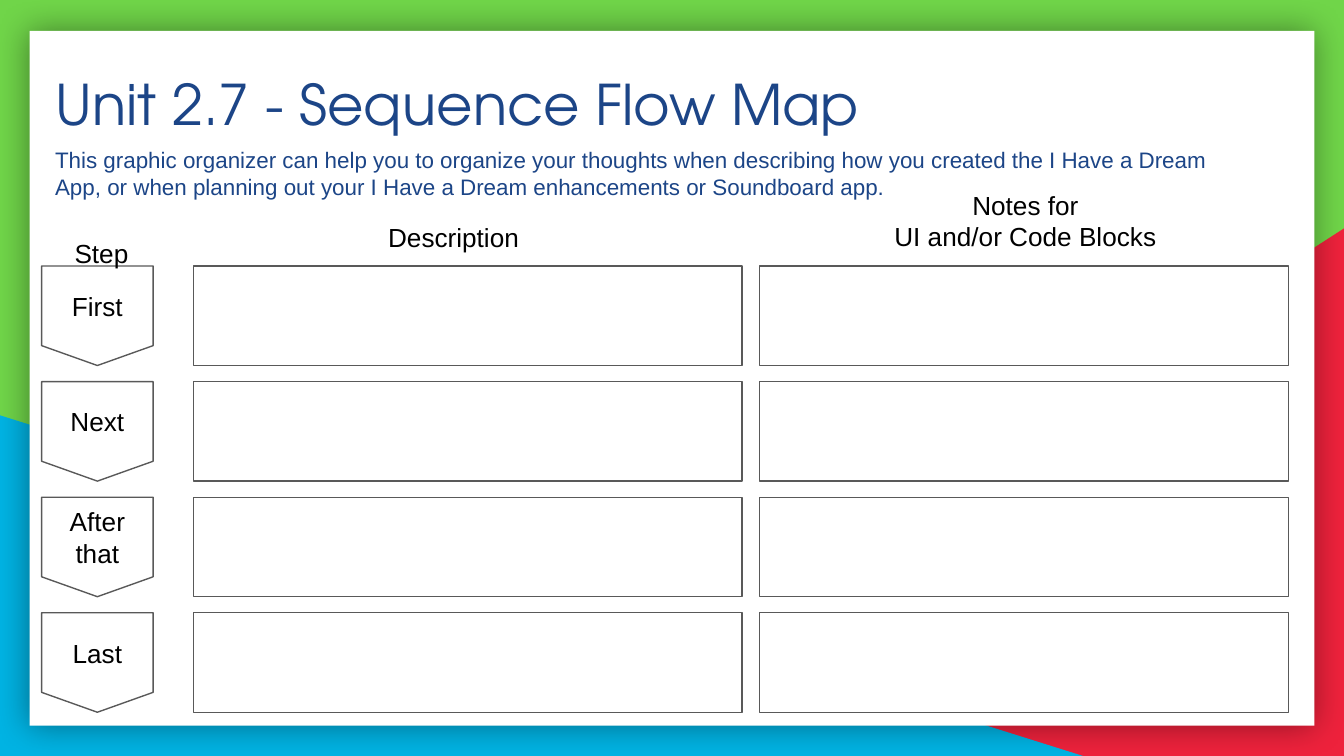
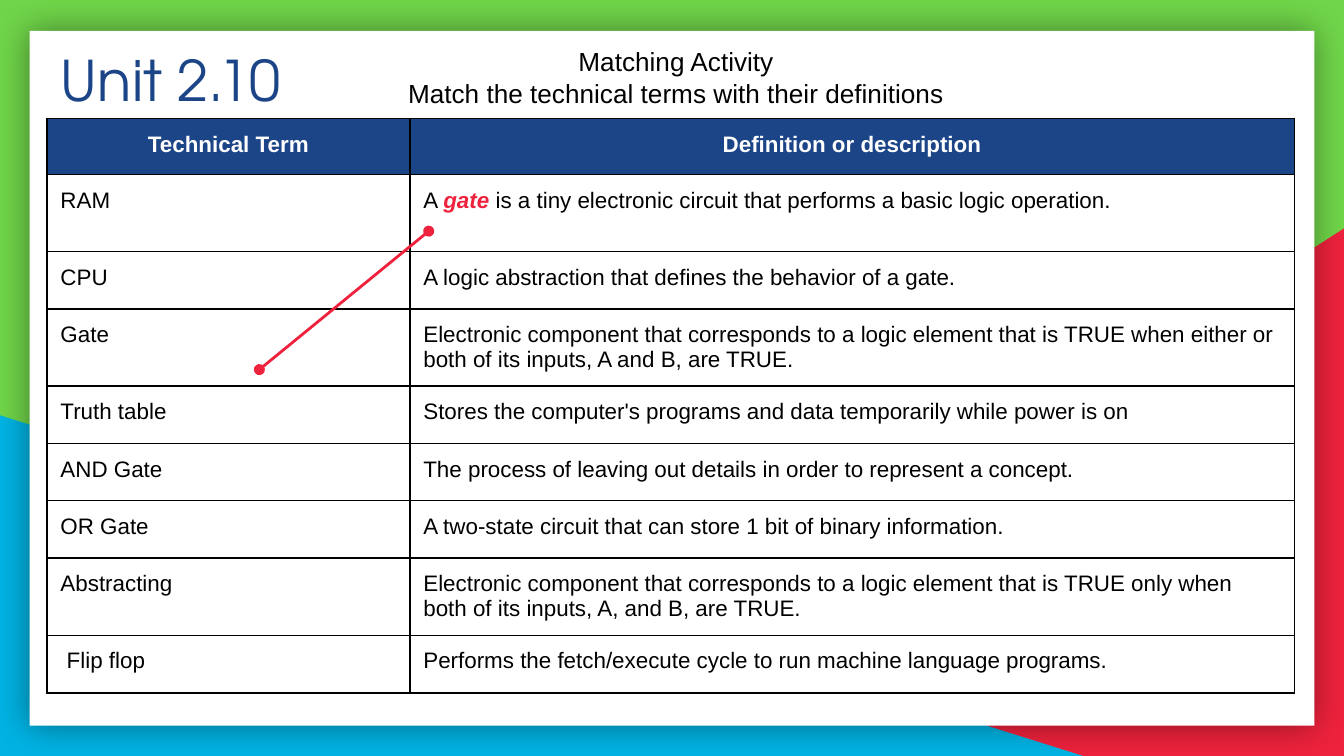
from lxml.etree import SubElement
from pptx import Presentation
from pptx.dml.color import RGBColor
from pptx.enum.shapes import MSO_CONNECTOR, MSO_SHAPE
from pptx.enum.text import MSO_ANCHOR as Anchor, MSO_AUTO_SIZE as AutoSize, PP_ALIGN as Align
from pptx.oxml.ns import qn
from pptx.util import Inches, Pt

GREEN = RGBColor(0x70, 0xD5, 0x49)
RED = RGBColor(0xEE, 0x22, 0x3C)
CYAN = RGBColor(0x00, 0xB3, 0xE3)
NAVY = RGBColor(0x1C, 0x45, 0x87)
GRAY = RGBColor(0x59, 0x59, 0x59)
BLACK = RGBColor(0, 0, 0)
WHITE = RGBColor(255, 255, 255)

BODY_FONT = "Arial"
TITLE_FONT = "TeX Gyre Adventor"
WIDTH, HEIGHT = 10, 10 * 9 / 16
INSET = Inches(0.1)

STEPS = ["First", "Next", "After that", "Last"]
MATCHES = [
    ("RAM", None),
    ("CPU", "A logic abstraction that defines the behavior of a gate."),
    ("Gate", "Electronic component that corresponds to a logic element that is "
             "TRUE when either or both of its inputs, A and B, are TRUE."),
    ("Truth table", "Stores the computer's programs and data temporarily while power is on"),
    ("AND Gate", "The process of leaving out details in order to represent a concept."),
    ("OR Gate", "A two-state circuit that can store 1 bit of binary information."),
    ("Abstracting", "Electronic component that corresponds to a logic element that is "
                    "TRUE only when both of its inputs, A, and B, are TRUE."),
    (" Flip flop", "Performs the fetch/execute cycle to run machine language programs."),
]
ROW_HEIGHTS = [0.42, 0.57, 0.43, 0.57, 0.43, 0.42, 0.43, 0.57, 0.43]


def add_color(parent, color):
    fill = SubElement(parent, qn("a:solidFill"))
    return SubElement(fill, qn("a:srgbClr"), val=str(color))


class Deck:
    """Holds the shared style and the current slide."""

    def __init__(self):
        self.presentation = Presentation()
        self.presentation.slide_width = Inches(WIDTH)
        self.presentation.slide_height = Inches(HEIGHT)
        self.layout = self.presentation.slide_layouts.get_by_name("Title Only")
        self.slide = None

    def new_slide(self):
        self.slide = self.presentation.slides.add_slide(self.layout)

    def build_backdrop(self):
        """Draw the coloured backdrop once and move it to the master."""
        master = self.presentation.slide_master
        master.background.fill.solid()
        master.background.fill.fore_color.rgb = GREEN
        red_corner = self.shape(MSO_SHAPE.RIGHT_TRIANGLE, 3.92, 1.7, 6.08, HEIGHT - 1.7, fill=RED)
        red_corner._element.spPr.find(qn("a:xfrm")).set("flipH", "1")
        cyan_corner = self.shape(MSO_SHAPE.RIGHT_TRIANGLE, 0, 3.09, 8.06, HEIGHT - 3.09, fill=CYAN)
        panel = self.shape(MSO_SHAPE.RECTANGLE, 0.22, 0.23, 9.56, 5.17, fill=WHITE)
        effects = panel._element.spPr.find(qn("a:effectLst"))
        shadow = SubElement(effects, qn("a:outerShdw"), blurRad=str(Pt(18)),
                            dist="0", dir="0", algn="ctr", rotWithShape="0")
        shadow_color = SubElement(shadow, qn("a:srgbClr"), val=str(BLACK))
        SubElement(shadow_color, qn("a:alpha"), val="40000")
        for index, part in enumerate((red_corner, cyan_corner, panel)):
            master.shapes._spTree.insert(2 + index, part._element)

    def add_run(self, paragraph, text, size, color=BLACK, font=BODY_FONT, bold=False, italic=False):
        run = paragraph.add_run()
        run.text = text
        run.font.name = font
        run.font.size = Pt(size)
        run.font.color.rgb = color
        run.font.bold = bold
        run.font.italic = italic

    def prepare_frame(self, frame, anchor=Anchor.TOP):
        frame.word_wrap = True
        frame.auto_size = AutoSize.NONE
        frame.vertical_anchor = anchor
        frame.margin_left = frame.margin_right = INSET
        frame.margin_top = frame.margin_bottom = INSET

    def title(self, text, left, top, width, height, subtitle=None):
        title = self.slide.shapes.title
        title.left, title.top = Inches(left), Inches(top)
        title.width, title.height = Inches(width), Inches(height)
        frame = title.text_frame
        self.prepare_frame(frame)
        frame.paragraphs[0].alignment = Align.LEFT
        self.add_run(frame.paragraphs[0], text, 30, NAVY, TITLE_FONT)
        if subtitle:
            paragraph = frame.add_paragraph()
            paragraph.alignment = Align.LEFT
            paragraph.space_before = Pt(5)
            self.add_run(paragraph, subtitle, 12, NAVY)

    def shape(self, kind, left, top, width, height, fill=None, line=None, text=None):
        shape = self.slide.shapes.add_shape(
            kind, Inches(left), Inches(top), Inches(width), Inches(height))
        shape.shadow.inherit = False
        if fill is None:
            shape.fill.background()
        else:
            shape.fill.solid()
            shape.fill.fore_color.rgb = fill
        if line is None:
            shape.line.fill.background()
        else:
            shape.line.color.rgb = line
            shape.line.width = Pt(0.75)
        if text:
            self.prepare_frame(shape.text_frame, Anchor.MIDDLE)
            paragraph = shape.text_frame.paragraphs[0]
            paragraph.alignment = Align.CENTER
            self.add_run(paragraph, text, 14)
        return shape

    def label(self, lines, left, top, width, height):
        box = self.slide.shapes.add_textbox(
            Inches(left), Inches(top), Inches(width), Inches(height))
        frame = box.text_frame
        self.prepare_frame(frame)
        for index, line in enumerate(lines):
            paragraph = frame.add_paragraph() if index else frame.paragraphs[0]
            paragraph.alignment = Align.CENTER
            self.add_run(paragraph, line, 14)

    def table(self, left, top, column_widths, row_heights):
        table = self.slide.shapes.add_table(
            len(row_heights), len(column_widths), Inches(left), Inches(top),
            Inches(sum(column_widths)), Inches(sum(row_heights))).table
        table.first_row = table.horz_banding = False
        for column, width in zip(table.columns, column_widths):
            column.width = Inches(width)
        for row, height in zip(table.rows, row_heights):
            row.height = Inches(height)
        return table

    def cell(self, cell, runs, fill=None, align=Align.LEFT):
        """Fill one cell; runs is a list of (text, style) pairs."""
        cell.margin_left = cell.margin_right = INSET
        cell.margin_top = cell.margin_bottom = INSET
        properties = cell._tc.get_or_add_tcPr()
        for side in ("a:lnL", "a:lnR", "a:lnT", "a:lnB"):
            add_color(SubElement(properties, qn(side), w=str(Pt(0.75))), BLACK)
        if fill is None:
            cell.fill.background()
        else:
            cell.fill.solid()
            cell.fill.fore_color.rgb = fill
        paragraph = cell.text_frame.paragraphs[0]
        paragraph.alignment = align
        for text, style in runs:
            self.add_run(paragraph, text, 12, **style)
        return paragraph

    def match_line(self, start, end):
        connector = self.slide.shapes.add_connector(
            MSO_CONNECTOR.STRAIGHT, *(Inches(value) for value in start + end))
        connector.line.color.rgb = RED
        connector.line.width = Pt(1.5)
        line = connector.line._get_or_add_ln()
        for line_end in ("a:headEnd", "a:tailEnd"):
            SubElement(line, qn(line_end), type="oval")
        SubElement(connector._element.spPr, qn("a:effectLst"))


def sequence_slide(deck):
    deck.title("Unit 2.7 - Sequence Flow Map", 0.31, 0.42, 9.12, 1.77,
               subtitle="This graphic organizer can help you to organize your thoughts when "
                        "describing how you created the I Have a Dream App, or when planning "
                        "out your I Have a Dream enhancements or Soundboard app.")
    # One row per step: pointer, description box, notes box
    for index, step in enumerate(STEPS):
        top = 1.98 + 0.86 * index
        deck.shape(MSO_SHAPE.FLOWCHART_OFFPAGE_CONNECTOR, 0.31, top, 0.83, 0.74,
                   line=GRAY, text=step)
        for left, width in ((1.44, 4.08), (5.65, 3.94)):
            deck.shape(MSO_SHAPE.RECTANGLE, left, top, width, 0.74, line=GRAY)
    # Column headings
    deck.label(["Step"], 0.34, 1.67, 0.83, 0.44)
    deck.label(["Description"], 2.47, 1.55, 1.81, 0.44)
    deck.label(["Notes for", "UI and/or Code Blocks"], 6.33, 1.31, 2.6, 0.67)


def matching_slide(deck):
    deck.title("Unit 2.10", 0.35, 0.24, 2.18, 0.94)
    # Terms and definitions
    table = deck.table(0.35, 0.88, [2.7, 6.58], ROW_HEIGHTS)
    for column, heading in enumerate(("Technical Term", "Definition or description")):
        deck.cell(table.cell(0, column), [(heading, {"color": WHITE, "bold": True})],
                  NAVY, Align.CENTER)
    gate_runs = [
        ("A ", {}),
        ("gate ", {"color": RED, "bold": True, "italic": True}),
        ("is a tiny electronic circuit that performs a basic logic operation.", {}),
    ]
    for row, (term, definition) in enumerate(MATCHES, start=1):
        deck.cell(table.cell(row, 0), [(term, {})])
        runs = [(definition, {})] if definition else gate_runs
        paragraph = deck.cell(table.cell(row, 1), runs)
        if not definition:
            indent = Inches(0.38)
            properties = paragraph._p.get_or_add_pPr()
            properties.set("marL", str(indent))
            properties.set("indent", str(-indent))
    # Instructions and the worked example
    deck.label(["Matching Activity", "Match the technical terms with their definitions"],
               0.27, 0.24, 9.52, 1.14)
    deck.match_line((3.19, 1.72), (1.93, 2.75))


def main():
    deck = Deck()
    deck.new_slide()
    deck.build_backdrop()
    sequence_slide(deck)
    deck.new_slide()
    matching_slide(deck)
    deck.presentation.save("out.pptx")


if __name__ == "__main__":
    main()
